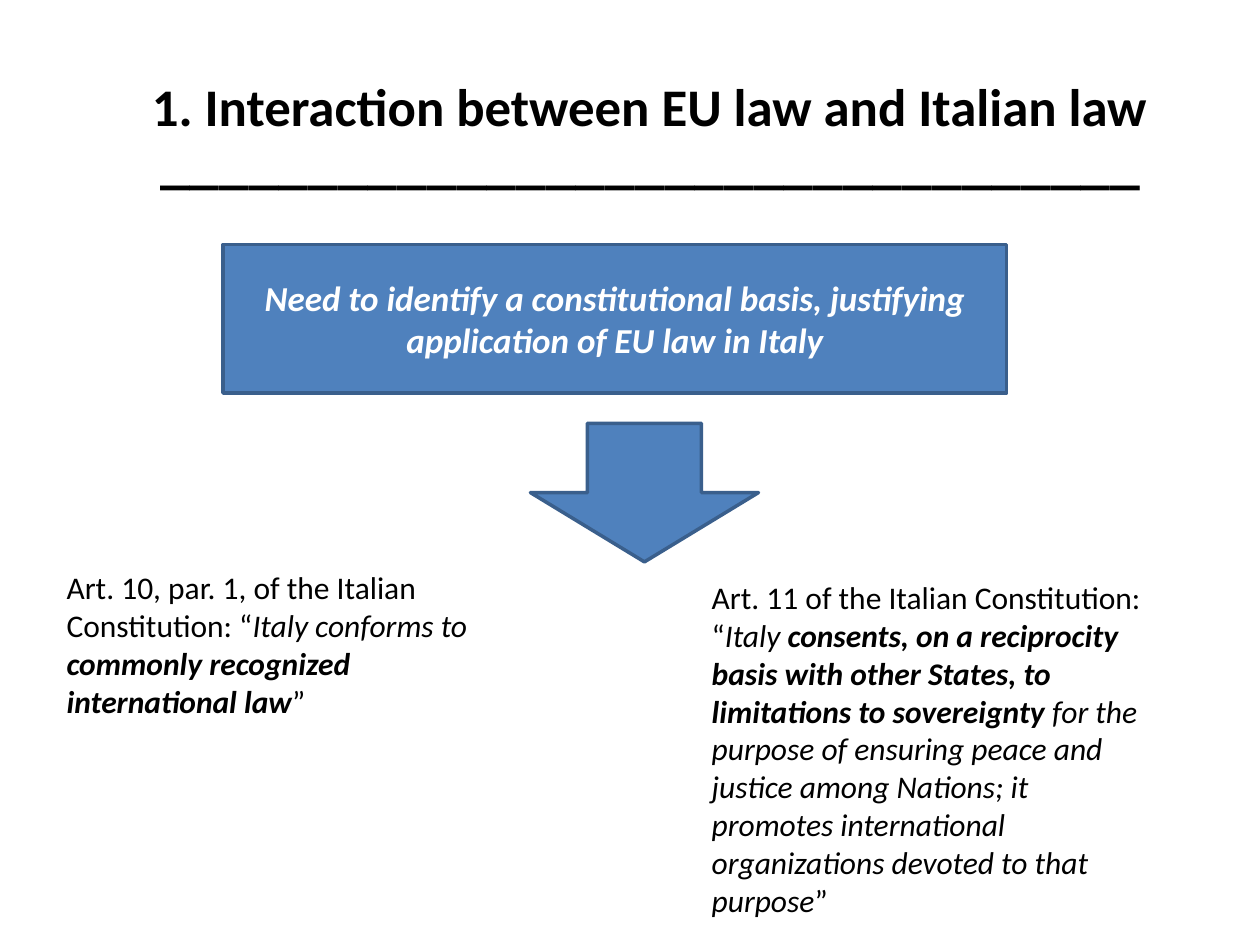
from dataclasses import dataclass

from pptx import Presentation
from pptx.dml.color import RGBColor
from pptx.enum.shapes import MSO_SHAPE
from pptx.enum.text import MSO_ANCHOR, MSO_AUTO_SIZE, PP_ALIGN
from pptx.util import Emu, Pt

PX = 9144  # 100 px to the inch
RECT, DOWN_ARROW = MSO_SHAPE.RECTANGLE, MSO_SHAPE.DOWN_ARROW
MIDDLE, CENTER = MSO_ANCHOR.MIDDLE, PP_ALIGN.CENTER
NO_AUTOFIT = MSO_AUTO_SIZE.NONE
TITLE_ONLY = 5


@dataclass(frozen=True)
class Theme:
    font: str = "Calibri"
    text: RGBColor = RGBColor(0x00, 0x00, 0x00)
    inverse: RGBColor = RGBColor(0xFF, 0xFF, 0xFF)
    fill: RGBColor = RGBColor(0x4F, 0x81, 0xBD)
    outline: RGBColor = RGBColor(0x3A, 0x5F, 0x8C)
    outline_width: float = 2
    title: float = 30.2
    rule: float = 34.1
    callout: float = 20
    body: float = 18


THEME = Theme()

ARTICLE_10 = [
    ("Art. 10, par. 1, of the Italian Constitution: “", ""),
    ("Italy conforms to ", "i"),
    ("commonly recognized international law", "bi"),
    ("”", ""),
]
ARTICLE_11 = [
    ("Art. 11 of the Italian Constitution: “", ""),
    ("Italy ", "i"),
    ("consents, on a reciprocity basis with other States, "
     "to limitations to sovereignty ", "bi"),
    ("for the purpose of ensuring peace and justice among Nations; it promotes "
     "international organizations devoted to that purpose", "i"),
    ("”", ""),
]


def emu(box):
    return [Emu(v * PX) for v in box]


def format_run(r, size, color=THEME.text, style=""):
    """Style holds "b" for bold and "i" for italic."""
    r.font.name = THEME.font
    r.font.size = Pt(size)
    r.font.color.rgb = color
    r.font.bold = "b" in style
    r.font.italic = "i" in style


def add_title(s, box, text, rule):
    sp = s.shapes.title
    sp.left, sp.top, sp.width, sp.height = emu(box)
    tf = sp.text_frame
    tf.text = f"{text}\n{rule}"
    tf.word_wrap = True
    tf.auto_size = NO_AUTOFIT
    tf.vertical_anchor = MIDDLE
    for p, size in zip(tf.paragraphs, (THEME.title, THEME.rule)):
        p.alignment = CENTER
        p.line_spacing = 0.8
        p.space_before = Pt(0)
        format_run(p.runs[0], size, style="b")


def add_block(s, kind, box):
    sp = s.shapes.add_shape(kind, *emu(box))
    sp.shadow.inherit = False
    sp.fill.solid()
    sp.fill.fore_color.rgb = THEME.fill
    sp.line.color.rgb = THEME.outline
    sp.line.width = Pt(THEME.outline_width)
    return sp


def add_callout(s, box, text):
    tf = add_block(s, RECT, box).text_frame
    tf.text = text
    tf.word_wrap = True
    tf.vertical_anchor = MIDDLE
    p = tf.paragraphs[0]
    p.alignment = CENTER
    format_run(p.runs[0], THEME.callout, THEME.inverse, "bi")


def add_article(s, box, parts):
    tf = s.shapes.add_textbox(*emu(box)).text_frame
    tf.word_wrap = True
    tf.auto_size = MSO_AUTO_SIZE.SHAPE_TO_FIT_TEXT
    p = tf.paragraphs[0]
    for text, style in parts:
        r = p.add_run()
        r.text = text
        format_run(r, THEME.body, style=style)


def main():
    prs = Presentation()
    prs.slide_width, prs.slide_height = emu((1000, 750))
    s = prs.slides.add_slide(prs.slide_layouts[TITLE_ONLY])
    add_title(s, (91, 36, 850, 150),
              "1. Interaction between EU law and Italian law", "_" * 33)
    add_callout(s, (177, 194, 622, 118),
                "Need to identify a constitutional basis, justifying "
                "application of EU law in Italy")
    add_block(s, DOWN_ARROW, (421, 336, 181, 110))
    add_article(s, (43, 446, 339, 131), ARTICLE_10)
    add_article(s, (555, 454, 362, 283), ARTICLE_11)
    prs.save("out.pptx")


if __name__ == "__main__":
    main()
